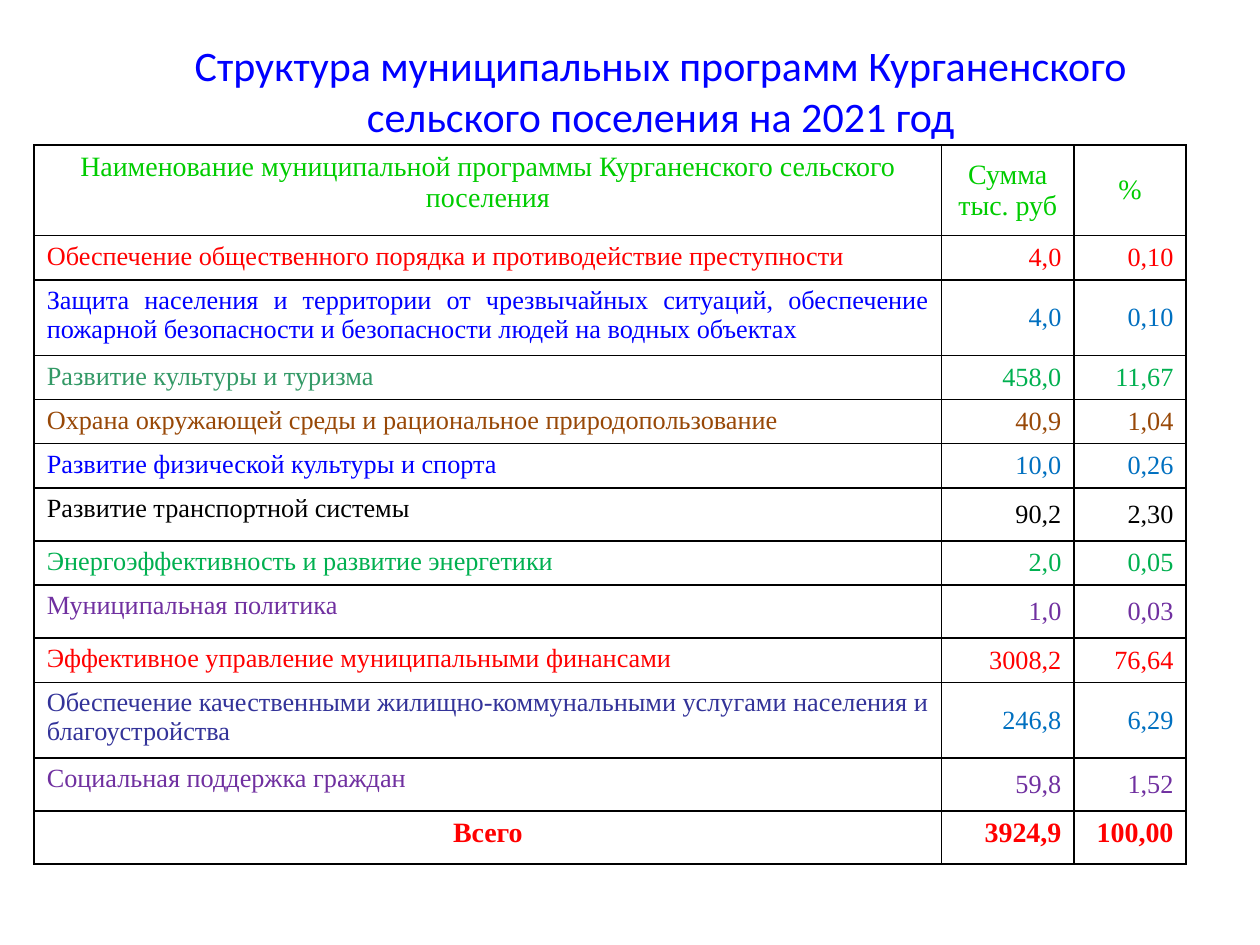
from lxml import etree
from pptx import Presentation
from pptx.dml.color import RGBColor
from pptx.enum.text import MSO_ANCHOR, PP_ALIGN
from pptx.oxml.ns import qn
from pptx.util import Cm, Pt

FULL, RIGHT = PP_ALIGN.JUSTIFY, PP_ALIGN.RIGHT
CENTER = PP_ALIGN.CENTER
TOP, MIDDLE = MSO_ANCHOR.TOP, MSO_ANCHOR.MIDDLE

BLACK = RGBColor(0x00, 0x00, 0x00)
BLUE = RGBColor(0x00, 0x00, 0xFF)
SKY = RGBColor(0x00, 0x70, 0xC0)
NAVY = RGBColor(0x33, 0x33, 0x99)
LIME = RGBColor(0x00, 0xCC, 0x00)
GREEN = RGBColor(0x00, 0xB0, 0x50)
SEA = RGBColor(0x33, 0x99, 0x66)
BROWN = RGBColor(0x98, 0x48, 0x07)
PURPLE = RGBColor(0x70, 0x30, 0xA0)
RED = RGBColor(0xFF, 0x00, 0x00)

# Column widths in cm
COLS = (18.29, 2.67, 2.26)

HEAD = ("Наименование муниципальной программы Курганенского сельского поселения",
        "Сумма тыс. руб", "%")
TOTAL = ("Всего", "3924,9", "100,00")

# Row height in cm, name, sum, share, name colour, number colour
ITEMS = (
    (0.58, "Обеспечение общественного порядка и противодействие преступности",
     "4,0", "0,10", RED, RED),
    (0.97, "Защита населения и территории от чрезвычайных ситуаций, обеспечение "
     "пожарной безопасности и безопасности людей на водных объектах",
     "4,0", "0,10", BLUE, SKY),
    (0.61, "Развитие культуры и туризма", "458,0", "11,67", SEA, GREEN),
    (0.61, "Охрана окружающей среды и рациональное природопользование",
     "40,9", "1,04", BROWN, BROWN),
    (0.79, "Развитие физической культуры и спорта", "10,0", "0,26", BLUE, SKY),
    (1.07, "Развитие транспортной системы", "90,2", "2,30", BLACK, BLACK),
    (0.51, "Энергоэффективность и развитие энергетики", "2,0", "0,05", GREEN, GREEN),
    (1.07, "Муниципальная политика", "1,0", "0,03", PURPLE, PURPLE),
    (0.74, "Эффективное управление муниципальными финансами",
     "3008,2", "76,64", RED, RED),
    (0.74, "Обеспечение качественными жилищно-коммунальными услугами населения "
     "и благоустройства", "246,8", "6,29", NAVY, SKY),
    (1.07, "Социальная поддержка граждан", "59,8", "1,52", PURPLE, PURPLE),
)


class Deck:
    title_font = "Calibri"
    table_font = "Times New Roman"
    edge = BLACK

    def __init__(self, wide, high):
        self.file = Presentation()
        self.file.slide_width, self.file.slide_height = Cm(wide), Cm(high)
        self.slide = self.file.slides.add_slide(self.file.slide_layouts[6])

    def text(self, frame, words, font, size, color, align, bold=False):
        frame.text = words
        line = frame.paragraphs[0]
        line.alignment = align
        face = line.runs[0].font
        face.name, face.size, face.bold = font, Pt(size), bold
        face.color.rgb = color

    def title(self, words, x, y, w, h):
        frame = self.slide.shapes.add_textbox(Cm(x), Cm(y), Cm(w), Cm(h)).text_frame
        frame.word_wrap = True
        frame.vertical_anchor = MIDDLE
        self.text(frame, words, self.title_font, 24, BLUE, CENTER)

    def table(self, x, y, h, cols, rows):
        shape = self.slide.shapes.add_table(
            len(rows), len(cols), Cm(x), Cm(y), Cm(sum(cols)), Cm(h))
        grid = shape.table
        grid.first_row = grid.horz_banding = False
        for col, wide in zip(grid.columns, cols):
            col.width = Cm(wide)
        for row, high in zip(grid.rows, rows):
            row.height = Cm(high)
        shape.height = Cm(h)
        return grid

    def cell(self, cell, words, size, color, align, anchor, bold=False):
        self.text(cell.text_frame, words, self.table_font, size, color, align, bold)
        cell.vertical_anchor = anchor
        # Borders come before the fill in the cell properties
        props = cell._tc.get_or_add_tcPr()
        for side in ("a:lnL", "a:lnR", "a:lnT", "a:lnB"):
            line = etree.SubElement(props, qn(side), w=str(Pt(1)))
            fill = etree.SubElement(line, qn("a:solidFill"))
            etree.SubElement(fill, qn("a:srgbClr"), val=str(self.edge))
        cell.fill.background()


def main():
    deck = Deck(25.4, 19.05)

    # Title
    deck.title("Структура муниципальных программ Курганенского сельского "
               "поселения на 2021 год", 2.54, 0.71, 21.56, 2.21)

    # Table frame
    highs = [1.83] + [item[0] for item in ITEMS] + [1.07]
    grid = deck.table(0.69, 2.92, 14.48, COLS, highs)

    # Header and total rows
    last = len(highs) - 1
    for c, (head, total) in enumerate(zip(HEAD, TOTAL)):
        deck.cell(grid.cell(0, c), head, 16, LIME, CENTER, MIDDLE if c else TOP)
        deck.cell(grid.cell(last, c), total, 16, RED, RIGHT if c else CENTER, TOP, True)

    # Programme rows
    for r, (_, name, cost, share, ink, tint) in enumerate(ITEMS, 1):
        deck.cell(grid.cell(r, 0), name, 15, ink, FULL, TOP)
        for c, value in enumerate((cost, share), 1):
            deck.cell(grid.cell(r, c), value, 15, tint, RIGHT, MIDDLE)

    deck.file.save("out.pptx")


if __name__ == "__main__":
    main()
